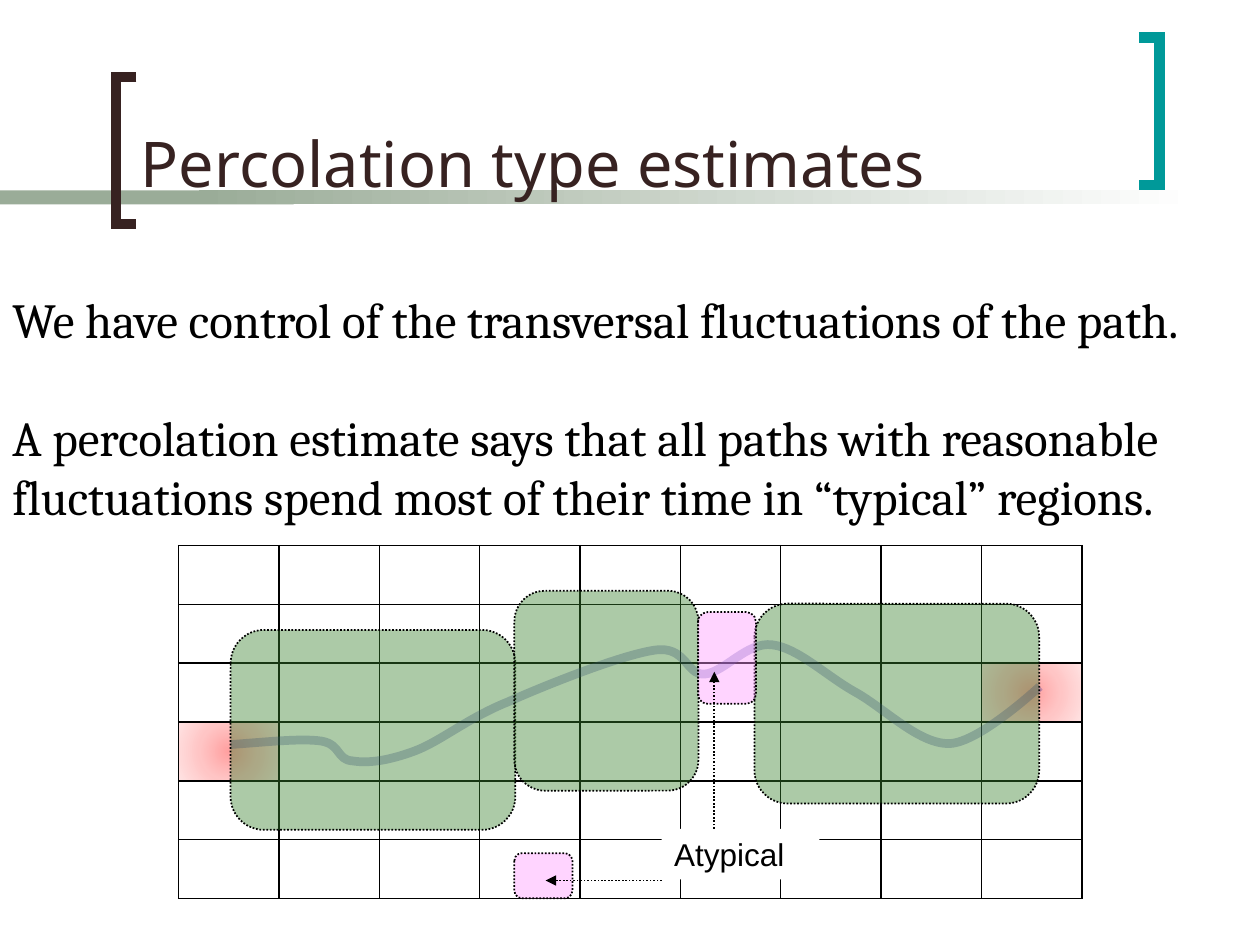
from pptx import Presentation
from pptx import util as u
from pptx.dml.color import RGBColor
from pptx.enum import dml, shapes, text
from pptx.oxml import parse_xml
from pptx.oxml.ns import nsdecls, qn

Cm, Pt = u.Cm, u.Pt
rgb = RGBColor.from_string


def stroke(shape, color, width, dash=None, extra=()):
    """Style an outline without shadow; extra holds (tag, type) line ends."""
    shape.line.color.rgb = rgb(color)
    shape.line.width = Pt(width)
    if dash:
        shape.line.dash_style = dash
    for tag, attributes in extra:
        shape.line._get_or_add_ln().append(
            parse_xml(f"<a:{tag} {nsdecls('a')} {attributes}/>"))
    if hasattr(shape, "shadow"):
        shape.shadow.inherit = False
    else:
        shape._element.spPr.append(parse_xml(f"<a:effectLst {nsdecls('a')}/>"))


def set_alpha(solid_fill, percent):
    solid_fill[0].append(
        parse_xml(f"<a:alpha {nsdecls('a')} val=\"{percent * 1000}\"/>"))


prs = Presentation()
prs.slide_width, prs.slide_height = Cm(25.4), Cm(19.05)
slide = prs.slides.add_slide(prs.slide_layouts[5])
parts = slide.shapes
RECT = shapes.MSO_SHAPE.RECTANGLE
DOTS = dml.MSO_LINE.ROUND_DOT

# Rule under the title: a plain start, then a fade to white
for left, width, fades in [(0, 5.92, False), (4.01, 20.12, True)]:
    rule = parts.add_shape(RECT, Cm(left), Cm(3.84), Cm(width), Cm(0.28))
    if fades:
        rule.fill.gradient()
        rule.fill.gradient_angle = 0
        for stop, color in zip(rule.fill.gradient_stops, ("9AAC98", "FFFFFF")):
            stop.color.rgb = rgb(color)
            stop.position = 0 if color == "9AAC98" else 1
    else:
        rule.fill.solid()
        rule.fill.fore_color.rgb = rgb("9AAC98")
    rule.line.fill.background()
    rule.shadow.inherit = False

# Brackets around the title: tip, spine, top, colour
for tip, spine, top, color in [(2.75, 2.34, 1.55, "372221"),
                               (22.96, 23.37, 0.76, "009999")]:
    bottom = top + 2.97
    pen = parts.build_freeform(Cm(tip), Cm(top))
    pen.add_line_segments([(Cm(spine), Cm(top)), (Cm(spine), Cm(bottom)),
                           (Cm(tip), Cm(bottom))], close=False)
    bracket = pen.convert_to_shape()
    bracket.fill.background()
    stroke(bracket, color, 6, extra=[("miter", 'lim="800000"')])

# Title, in front of the rule
title = parts.title
parts._spTree.append(title._element)
title.left, title.top, title.width, title.height = Cm(2.59), Cm(0), Cm(20.7), Cm(4.19)
frame = title.text_frame
frame.text = "Percolation type estimates"
frame.auto_size = text.MSO_AUTO_SIZE.NONE
frame.vertical_anchor = text.MSO_ANCHOR.BOTTOM
frame.margin_left, frame.margin_right = Cm(0.25), Cm(0.36)
frame.margin_top = frame.margin_bottom = Cm(0.15)
frame.paragraphs[0].alignment = text.PP_ALIGN.LEFT
title_font = frame.paragraphs[0].runs[0].font
title_font.name, title_font.size = "Noto Sans", Pt(36)
title_font.color.rgb = rgb("372221")

# Grid of regions, with the two glowing end cells
grid = parts.add_table(6, 9, Cm(3.6), Cm(11), Cm(18.21), Cm(7.11)).table
grid.first_row = grid.horz_banding = False
GLOW = "".join(f'<a:gs pos="{pos}"><a:srgbClr val="{color}"/></a:gs>' for pos, color in
               [(0, "FFA0A0"), (50000, "FFC5C5"), (100000, "FFE3E3")])
for row in range(6):
    for col in range(9):
        cell = grid.cell(row, col)
        tc_pr = cell._tc.get_or_add_tcPr()
        for side in "LRTB":
            tc_pr.append(parse_xml(
                f'<a:ln{side} {nsdecls("a")} w="12700"><a:solidFill>'
                f'<a:srgbClr val="000000"/></a:solidFill></a:ln{side}>'))
        if (row, col) in [(3, 0), (2, 8)]:
            tc_pr.append(parse_xml(
                f'<a:gradFill {nsdecls("a")}><a:gsLst>{GLOW}</a:gsLst>'
                '<a:path path="circle"><a:fillToRect l="50000" t="50000" '
                'r="50000" b="50000"/></a:path></a:gradFill>'))
        else:
            cell.fill.background()

# Path through the grid: start point, then three Bézier points per curve
path_points = [
    (4.65, 15.01),
    (5.36, 14.96), (6.07, 14.88), (6.48, 14.94),
    (6.88, 15.01), (6.78, 15.32), (7.11, 15.34),
    (7.42, 15.39), (7.82, 15.34), (8.36, 15.14),
    (8.89, 14.94), (9.42, 14.48), (10.24, 14.15),
    (11.05, 13.79), (12.52, 13.21), (13.18, 13.11),
    (13.84, 13), (13.82, 13.61), (14.2, 13.59),
    (14.6, 13.56), (15.06, 12.93), (15.57, 13),
    (16.08, 13.06), (16.64, 13.61), (17.22, 13.94),
    (17.83, 14.27), (18.52, 15.01), (19.15, 14.99),
    (19.76, 14.96), (20.96, 13.84), (20.96, 13.84)]
points = [(Cm(x), Cm(y)) for x, y in path_points]
pen = parts.build_freeform(*points[0])
pen.add_line_segments(points[1:], close=False)
route = pen.convert_to_shape()
segments = list(route._element.iter(qn("a:lnTo")))
for first in range(0, len(segments), 3):
    curve = parse_xml(f"<a:cubicBezTo {nsdecls('a')}/>")
    segments[first].addprevious(curve)
    for segment in segments[first:first + 3]:
        curve.append(segment[0])
        segment.getparent().remove(segment)
route.fill.background()
stroke(route, "333399", 5)
set_alpha(route.line._get_or_add_ln().find(qn("a:solidFill")), 30)

# Statements
statements = parts.add_textbox(Cm(0), Cm(5.72), Cm(25.4), Cm(4.52)).text_frame
statements.word_wrap = True
statements.text = (
    "We have control of the transversal fluctuations of the path.\n"
    "A percolation estimate says that all paths with reasonable fluctuations "
    "spend most of their time in “typical” regions.")
statements.paragraphs[1].space_before = Pt(33.7)
for statement in statements.paragraphs:
    font = statement.runs[0].font
    font.name, font.size = "Cambria", Pt(28)
    font.color.rgb = rgb("000000")

# Typical (green) and atypical (pink) regions
TYPICAL, ATYPICAL = "3B812F", "FF99FF"
for left, top, width, height, color in [
        (4.65, 12.7, 5.74, 4.03, TYPICAL),
        (10.37, 11.91, 3.71, 4.03, TYPICAL),
        (15.21, 12.17, 5.74, 4.03, TYPICAL),
        (14.07, 12.34, 1.17, 1.85, ATYPICAL),
        (10.37, 17.2, 1.17, 0.91, ATYPICAL)]:
    region = parts.add_shape(shapes.MSO_SHAPE.ROUNDED_RECTANGLE,
                             Cm(left), Cm(top), Cm(width), Cm(height))
    region.fill.solid()
    region.fill.fore_color.rgb = rgb(color)
    set_alpha(region._element.spPr.find(qn("a:solidFill")), 42)
    stroke(region, "000000", 1, DOTS)

# Label with arrows to the atypical regions
label = parts.add_textbox(Cm(13.34), Cm(16.71), Cm(3.18), Cm(1.02))
label.fill.solid()
label.fill.fore_color.rgb = rgb("FFFFFF")
label.text_frame.word_wrap = True
label.text_frame.text = "Atypical"
label_font = label.text_frame.paragraphs[0].runs[0].font
label_font.name, label_font.size = "Arial", Pt(18)
label_font.color.rgb = rgb("000000")
for ends in [(13.34, 17.75, 11, 17.75), (14.4, 16.71, 14.4, 13.54)]:
    arrow = parts.add_connector(shapes.MSO_CONNECTOR.STRAIGHT, *map(Cm, ends))
    stroke(arrow, "000000", 1, DOTS, [("tailEnd", 'type="triangle"')])

prs.save("out.pptx")
